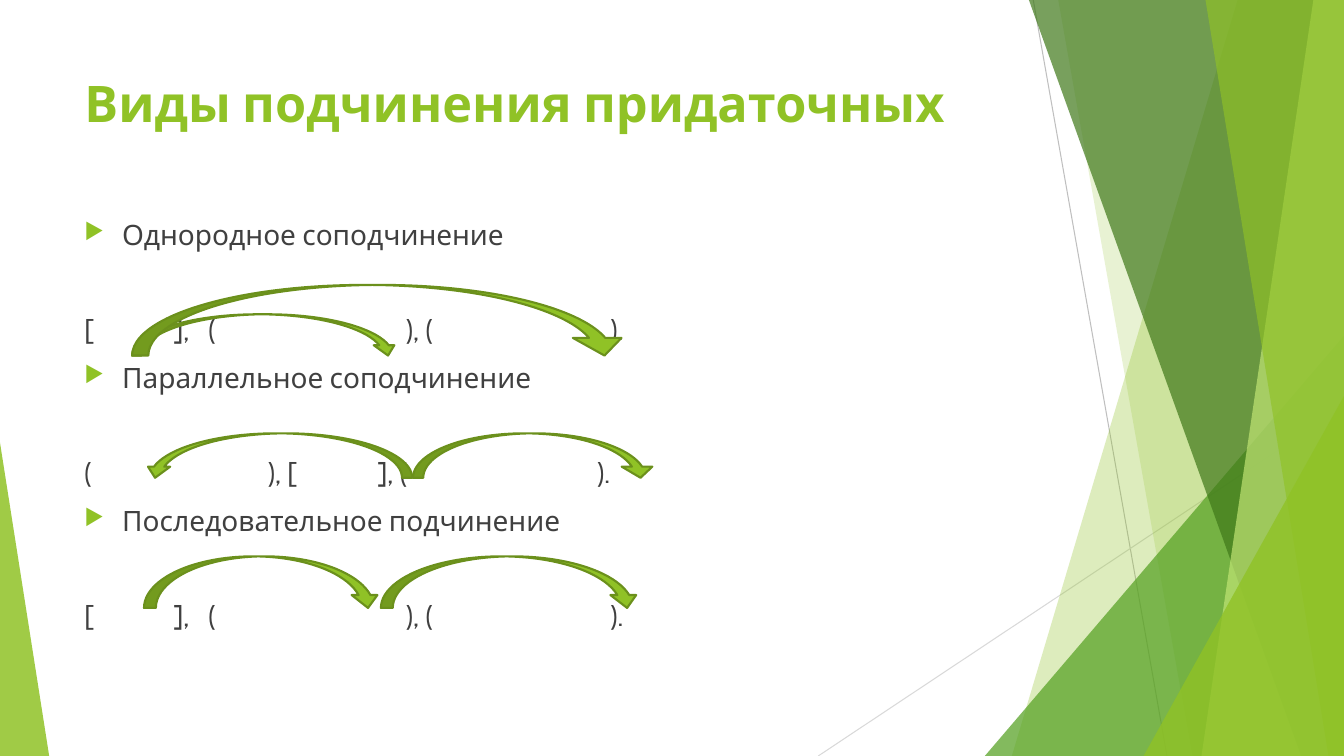
from lxml import etree
from pptx import Presentation
from pptx.dml.color import RGBColor
from pptx.enum.shapes import MSO_CONNECTOR, MSO_SHAPE
from pptx.enum.text import MSO_ANCHOR
from pptx.oxml.ns import qn
from pptx.util import Cm, Pt

STRAIGHT = MSO_CONNECTOR.STRAIGHT
TRIANGLE = MSO_SHAPE.ISOSCELES_TRIANGLE
ARC_ARROW = MSO_SHAPE.CURVED_DOWN_ARROW
TOP = MSO_ANCHOR.TOP

FONT = "Cabin"
COLORS = {
    "lime": "90C226",
    "green": "54A021",
    "forest": "3F7819",
    "pale": "C0E474",
    "olive": "6B901C",
    "text": "404040",
    "gray": "BFBFBF",
    "light_gray": "D9D9D9",
}
WIDTH, HEIGHT = 33.87, 19.05

# Arcs: left, width, height, arrowhead adjustment, points left
SCHEMES = [
    {
        "name": "Однородное соподчинение",
        "parts": ["[", "],", "(", "), (", ")."],
        "stops": [2.26, 3.12, 8.1, 13.25],
        "foot": 3.6,
        "arcs": [(1.45, 6.71, 1.04, 0.5, False), (1.45, 12.52, 1.78, 0.69, False)],
    },
    {
        "name": "Параллельное соподчинение",
        "parts": ["(", "), [", "], (", ")."],
        "stops": [4.62, 7.4, 12.92],
        "foot": 6.68,
        "arcs": [(8.53, 6.12, 1.12, 0.69, False), (1.75, 6.76, 1.12, 0.5, True)],
    },
    {
        "name": "Последовательное подчинение",
        "parts": ["[", "],", "(", "), (", ")."],
        "stops": [2.26, 3.12, 8.1, 13.25],
        "foot": 9.96,
        "arcs": [(1.75, 5.97, 1.3, 0.5, False), (7.72, 6.53, 1.3, 0.5, False)],
    },
]


def color(name):
    return RGBColor.from_string(COLORS[name])


def add_xml(parent, tag, **attributes):
    return etree.SubElement(parent, qn(tag), attributes)


def paint(shape, fill, opacity=100):
    shape.shadow.inherit = False
    shape.fill.solid()
    shape.fill.fore_color.rgb = color(fill)
    shape.line.fill.background()
    if opacity < 100:
        tint = shape.fill._xPr.find(qn("a:solidFill"))[0]
        add_xml(tint, "a:alpha", val=str(opacity * 1000))


def add_hairline(slide, start, end, stroke):
    hairline = slide.shapes.add_connector(STRAIGHT, *map(Cm, start + end))
    hairline.line.color.rgb = color(stroke)
    hairline.line.width = Pt(0.75)
    add_xml(hairline._element.spPr, "a:effectLst")


def add_band(slide, box, top_inset, bottom_inset, fill, opacity):
    """Fill the box to the right of a slanted edge."""
    left, top, width, height = box
    right, bottom = left + width, top + height
    corners = [(right, top), (right, bottom), (left + bottom_inset, bottom)]
    outline = slide.shapes.build_freeform(Cm(left + top_inset), Cm(top), 1.0)
    outline.add_line_segments([(Cm(x), Cm(y)) for x, y in corners], close=True)
    paint(outline.convert_to_shape(), fill, opacity)


def add_corner(slide, box, apex, fill, opacity):
    corner = slide.shapes.add_shape(TRIANGLE, *map(Cm, box))
    corner.adjustments[0] = apex
    paint(corner, fill, opacity)


def add_right_facets(slide, box):
    left, top, width, height = box
    right, bottom = left + width, top + height
    add_hairline(slide, (left + 1.22, top), (left + 4.59, bottom), "gray")
    add_hairline(slide, (right, top + 10.24), (left - 4.2, bottom), "light_gray")
    add_band(slide, box, 6.37, 0.68, "lime", 30)
    add_band(slide, box, 1.85, 5.23, "lime", 20)
    add_corner(slide, (left, bottom - 10.59, width, 10.59), 1, "green", 72)
    add_band(slide, box, 1.11, 7.97, "forest", 70)
    add_band(slide, box, 8.28, 5.46, "pale", 70)
    add_band(slide, box, 5.56, 8.66, "lime", 65)
    add_corner(slide, (right - 5.05, bottom - 9.07, 5.05, 9.07), 1, "lime", 80)


def add_text_frame(slide, box):
    frame = slide.shapes.add_textbox(*map(Cm, box)).text_frame
    frame.word_wrap = True
    frame.vertical_anchor = TOP
    return frame


def style_text(paragraph, size, fill, bold=False):
    for run in paragraph.runs:
        run.font.name = FONT
        run.font.size = Pt(size)
        run.font.bold = bold
        run.font.color.rgb = color(fill)


def add_title(slide, box):
    title = add_text_frame(slide, box).paragraphs[0]
    title.text = "Виды подчинения придаточных"
    style_text(title, 36, "lime", bold=True)


def write_name(paragraph, name):
    paragraph.text = name
    paragraph.space_before = Pt(10)
    style_text(paragraph, 20, "text")
    properties = paragraph._p.get_or_add_pPr()
    properties.set("marL", str(Cm(0.95)))
    properties.set("indent", str(-Cm(0.95)))
    bullet_color = add_xml(properties, "a:buClr")
    add_xml(bullet_color, "a:srgbClr", val=COLORS["lime"])
    add_xml(properties, "a:buSzPct", val="80000")
    add_xml(properties, "a:buChar", char="▶")


def write_formula(paragraph, parts, stops):
    """Set the brackets apart with tab stops."""
    paragraph.text = "\t".join(parts)
    paragraph.space_before = Pt(44)
    style_text(paragraph, 20, "text")
    tabs = add_xml(paragraph._p.get_or_add_pPr(), "a:tabLst")
    for stop in stops:
        add_xml(tabs, "a:tab", pos=str(Cm(stop)), algn="l")


def add_arc(slide, box, head, points_left):
    arc = slide.shapes.add_shape(ARC_ARROW, *map(Cm, box))
    for index, value in enumerate((0.23, head, 0.25)):
        arc.adjustments[index] = value
    paint(arc, "lime")
    arc.line.color.rgb = color("olive")
    arc.line.width = Pt(1.5)
    if points_left:
        arc._element.spPr.xfrm.set("flipH", "1")


def add_schemes(slide, box):
    left, top = box[:2]
    frame = add_text_frame(slide, box)
    for number, scheme in enumerate(SCHEMES):
        name = frame.add_paragraph() if number else frame.paragraphs[0]
        write_name(name, scheme["name"])
        write_formula(frame.add_paragraph(), scheme["parts"], scheme["stops"])
    for scheme in SCHEMES:
        for offset, width, height, head, points_left in scheme["arcs"]:
            arc_top = top + scheme["foot"] - height
            arc_box = (left + offset, arc_top, width, height)
            add_arc(slide, arc_box, head, points_left)


def main():
    deck = Presentation()
    deck.slide_width, deck.slide_height = Cm(WIDTH), Cm(HEIGHT)
    slide = deck.slides.add_slide(deck.slide_layouts[6])
    add_right_facets(slide, (WIDTH - 9.05, 0, 9.05, HEIGHT))
    add_corner(slide, (0, HEIGHT - 7.9, 1.24, 7.9), 0, "lime", 85)
    add_title(slide, (1.88, 1.7, 23.88, 3.66))
    add_schemes(slide, (1.88, 5.36, 28.88, 11.43))
    deck.save("out.pptx")


if __name__ == "__main__":
    main()
